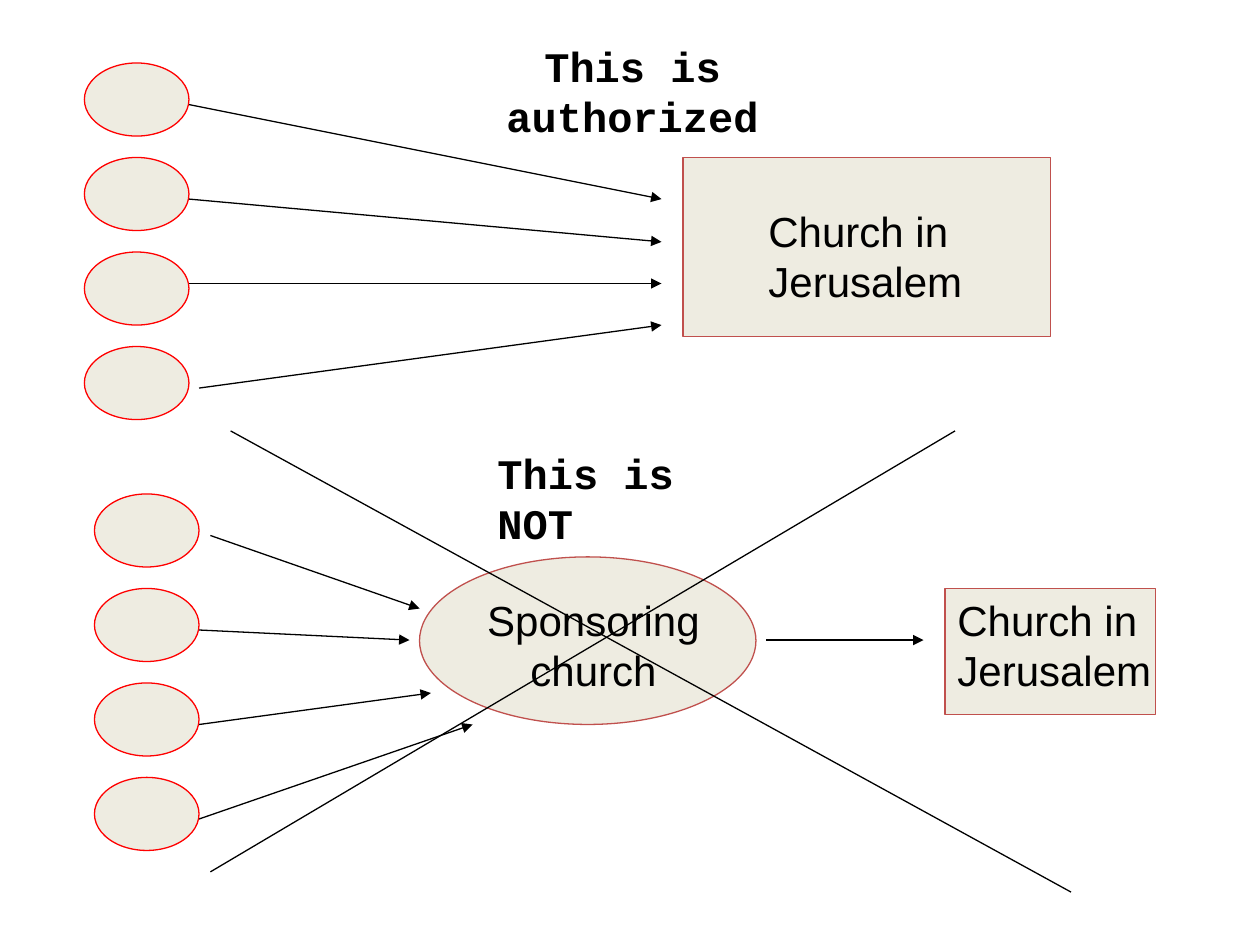
from pptx import Presentation
from pptx.dml.color import RGBColor
from pptx.enum.shapes import MSO_CONNECTOR, MSO_SHAPE
from pptx.enum.text import MSO_AUTO_SIZE, PP_ALIGN
from pptx.oxml.ns import qn
from pptx.util import Inches, Pt
from lxml import etree


def color(value):
    return RGBColor.from_string(value)


def add_label(text, left, top, width, height, font="Arial", bold=False, align=PP_ALIGN.LEFT):
    box = page.shapes.add_textbox(Inches(left), Inches(top), Inches(width), Inches(height))
    frame = box.text_frame
    frame.word_wrap = True
    frame.auto_size = MSO_AUTO_SIZE.SHAPE_TO_FIT_TEXT
    paragraph = frame.paragraphs[0]
    paragraph.alignment = align
    span = paragraph.add_run()
    span.text = text
    span.font.name = font
    span.font.size = Pt(24)
    span.font.bold = bold
    span.font.color.rgb = color("000000")


deck = Presentation()
deck.slide_width = Inches(10)
deck.slide_height = Inches(7.5)
page = deck.slides.add_slide(deck.slide_layouts[6])

# Two columns of four small churches, then the receiving and sponsoring churches
small_churches = [
    (MSO_SHAPE.OVAL, left, top + 0.75 * row, 0.83, 0.58, "FF0000")
    for left, top in [(0.67, 0.5), (0.75, 3.92)]
    for row in range(4)
]
large_churches = [
    (MSO_SHAPE.RECTANGLE, 5.42, 1.25, 2.92, 1.42, "C0504D"),
    (MSO_SHAPE.RECTANGLE, 7.5, 4.67, 1.67, 1, "C0504D"),
    (MSO_SHAPE.OVAL, 3.33, 4.42, 2.67, 1.33, "C0504D"),
]
for kind, left, top, width, height, outline in small_churches + large_churches:
    church = page.shapes.add_shape(kind, Inches(left), Inches(top), Inches(width), Inches(height))
    church.shadow.inherit = False
    church.fill.solid()
    church.fill.fore_color.rgb = color("EEECE1")
    church.line.color.rgb = color(outline)
    church.line.width = Pt(0.75)

# Church names and headings
add_label("Church in Jerusalem", 6, 1.58, 1.75, 0.9)
add_label("Church in Jerusalem", 7.5, 4.67, 1.75, 0.9)
add_label("Sponsoring church", 3.75, 4.67, 1.92, 0.9, align=PP_ALIGN.CENTER)
add_label("This is authorized", 3.58, 0.27, 2.88, 0.91,
          font="Courier New", bold=True, align=PP_ALIGN.CENTER)
add_label("This is NOT", 3.85, 3.5, 2.33, 0.5, font="Courier New", bold=True)

# Support arrows, then the two strokes that cross out the lower diagram
arrows = [
    (1.5, 0.83, 5.25, 1.58),
    (1.5, 1.58, 5.25, 1.92),
    (1.5, 2.25, 5.25, 2.25),
    (1.58, 3.08, 5.25, 2.58),
    (1.67, 4.25, 3.33, 4.83),
    (1.58, 5, 3.25, 5.08),
    (1.58, 5.75, 3.42, 5.5),
    (1.58, 6.5, 3.75, 5.75),
    (6.08, 5.08, 7.33, 5.08),
]
cross = [(1.83, 3.42, 8.5, 7.08), (1.67, 6.92, 7.58, 3.42)]
for ends in arrows + cross:
    line = page.shapes.add_connector(MSO_CONNECTOR.STRAIGHT, *[Inches(end) for end in ends])
    line.line.color.rgb = color("000000")
    line.line.width = Pt(0.75)
    if ends in arrows:
        etree.SubElement(line.line._get_or_add_ln(), qn("a:tailEnd"), type="triangle")
    etree.SubElement(line._element.spPr, qn("a:effectLst"))

deck.save("out.pptx")
